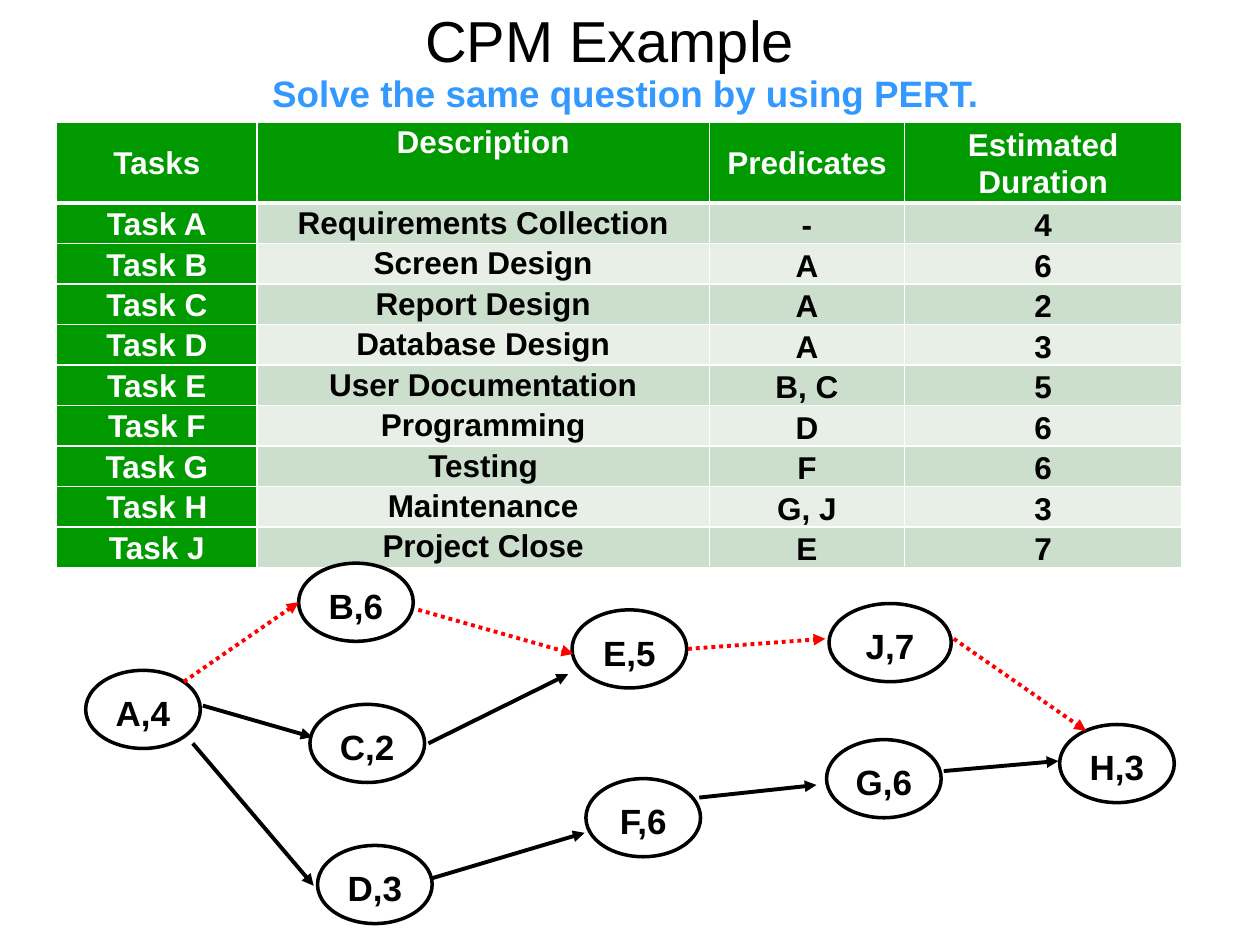
"""Build the CPM example slide: a task table above its activity network."""
from lxml.etree import SubElement
from pptx import Presentation
from pptx.dml.color import RGBColor
from pptx.enum.dml import MSO_LINE
from pptx.enum.shapes import MSO_CONNECTOR, MSO_SHAPE
from pptx.enum.text import MSO_ANCHOR, PP_ALIGN
from pptx.oxml.ns import qn
from pptx.util import Inches, Pt

GREEN, WHITE, BLACK, RED, BLUE = "009900", "FFFFFF", "000000", "FF0000", "3399FF"
BANDS = ["CCDECC", "E7EFE7"]

HEADER = ("Tasks", "Description", "Predicates", "Estimated Duration")
TASKS = [
    ("Task A", "Requirements Collection", "-", "4"),
    ("Task B", "Screen Design", "A", "6"),
    ("Task C", "Report Design", "A", "2"),
    ("Task D", "Database Design", "A", "3"),
    ("Task E", "User Documentation", "B, C", "5"),
    ("Task F", "Programming", "D", "6"),
    ("Task G", "Testing", "F", "6"),
    ("Task H", "Maintenance", "G, J", "3"),
    ("Task J", "Project Close", "E", "7"),
]
COLUMN_WIDTHS = [1.59, 3.59, 1.55, 2.2]
HEADER_HEIGHT, TASK_HEIGHT = 0.63, 0.32

NODE_WIDTH, NODE_HEIGHT = 0.91, 0.62
NODES = [
    ("A,4", 0.68, 5.32, NODE_WIDTH),
    ("B,6", 2.37, 4.47, NODE_WIDTH),
    ("C,2", 2.46, 5.59, NODE_WIDTH),
    ("D,3", 2.52, 6.71, NODE_WIDTH),
    ("E,5", 4.54, 4.84, NODE_WIDTH),
    ("F,6", 4.65, 6.18, NODE_WIDTH),
    ("G,6", 6.56, 5.87, NODE_WIDTH),
    ("J,7", 6.58, 4.79, 0.97),
    ("H,3", 8.41, 5.75, NODE_WIDTH),
]
CRITICAL_ARROWS = [
    (1.46, 5.41, 2.37, 4.78),
    (3.32, 4.84, 4.55, 5.19),
    (5.46, 5.15, 6.55, 5.07),
    (7.57, 5.07, 8.62, 5.8),
]
OTHER_ARROWS = [
    (1.61, 5.6, 2.48, 5.85),
    (1.53, 5.9, 2.49, 7.03),
    (3.4, 5.9, 4.51, 5.35),
    (3.43, 6.97, 4.64, 6.61),
    (5.55, 6.33, 6.48, 6.23),
    (7.49, 6.12, 8.4, 6.04),
]


def rgb(value):
    """Turn a hex string into a colour."""
    return RGBColor.from_string(value)


def write(frame, text, size, color, bold=True, spacing=1.0):
    """Put one centred, formatted paragraph into a text frame."""
    frame.text = text
    frame.word_wrap = True
    paragraph = frame.paragraphs[0]
    paragraph.alignment = PP_ALIGN.CENTER
    paragraph.line_spacing = spacing
    font = paragraph.runs[0].font
    font.name, font.size, font.bold = "Arial", Pt(size), bold
    font.color.rgb = rgb(color)
    return paragraph


def add_heading(page, place, text, size, color, bold, anchor):
    """Add a heading line in its own text box."""
    frame = page.shapes.add_textbox(*map(Inches, place)).text_frame
    frame.vertical_anchor = anchor
    write(frame, text, size, color, bold)


def add_border(cell, side, width):
    """Draw one white edge of a table cell."""
    properties = cell._tc.get_or_add_tcPr()
    edge = SubElement(properties, qn(f"a:ln{side}"), w=str(Pt(width)))
    SubElement(SubElement(edge, qn("a:solidFill")), qn("a:srgbClr"), val=WHITE)


def style_cell(cell, text, row, column):
    """Fill, border and write one cell according to its row and column."""
    is_label = row == 0 or column == 0
    for side in "LRTB":
        thick = (row == 0 and side == "B") or (row == 1 and side == "T")
        add_border(cell, side, 3 if thick else 1)
    cell.fill.solid()
    cell.fill.fore_color.rgb = rgb(GREEN if is_label else BANDS[(row - 1) % 2])
    cell.margin_left = cell.margin_right = Inches(0.06)
    cell.margin_top = cell.margin_bottom = 0
    if column == 1:
        cell.vertical_anchor = MSO_ANCHOR.TOP
    else:
        cell.vertical_anchor = MSO_ANCHOR.MIDDLE if is_label else MSO_ANCHOR.BOTTOM
    write(cell.text_frame, text, 18, WHITE if is_label else BLACK, spacing=1.07)


def add_task_table(page):
    """Add the table of tasks."""
    rows = [HEADER, *TASKS]
    heights = [HEADER_HEIGHT] + [TASK_HEIGHT] * len(TASKS)
    place = map(Inches, (0.45, 0.97, sum(COLUMN_WIDTHS), sum(heights)))
    table = page.shapes.add_table(len(rows), len(HEADER), *place).table
    for column, width in zip(table.columns, COLUMN_WIDTHS):
        column.width = Inches(width)
    for row, (texts, height) in enumerate(zip(rows, heights)):
        table.rows[row].height = Inches(height)
        for column, text in enumerate(texts):
            style_cell(table.cell(row, column), text, row, column)


def add_node(page, text, left, top, width):
    """Add one activity of the network."""
    place = map(Inches, (left, top, width, NODE_HEIGHT))
    node = page.shapes.add_shape(MSO_SHAPE.FLOWCHART_CONNECTOR, *place)
    node.shadow.inherit = False
    node.fill.solid()
    node.fill.fore_color.rgb = rgb(WHITE)
    node.line.color.rgb = rgb(BLACK)
    node.line.width = Pt(2)
    frame = node.text_frame
    frame.margin_left = frame.margin_right = Inches(0.07)
    frame.margin_top = frame.margin_bottom = Inches(0.04)
    frame.vertical_anchor = MSO_ANCHOR.MIDDLE
    write(frame, text, 20, BLACK, spacing=1.15).space_after = Pt(7.5)


def add_arrow(page, ends, critical):
    """Add one dependency, dotted red on the critical route."""
    arrow = page.shapes.add_connector(MSO_CONNECTOR.STRAIGHT, *map(Inches, ends))
    arrow.line.color.rgb = rgb(RED if critical else BLACK)
    arrow.line.width = Pt(2.25)
    if critical:
        arrow.line.dash_style = MSO_LINE.ROUND_DOT
    SubElement(arrow.line._get_or_add_ln(), qn("a:tailEnd"), type="triangle")
    SubElement(arrow._element.spPr, qn("a:effectLst"))


def main():
    """Assemble and save the slide."""
    deck = Presentation()
    deck.slide_width, deck.slide_height = Inches(10), Inches(7.5)
    page = deck.slides.add_slide(deck.slide_layouts[6])
    add_heading(page, (1.09, 0.17, 7.5, 0.29), "CPM Example", 33, BLACK, False, MSO_ANCHOR.MIDDLE)
    add_heading(page, (0.54, 0.51, 8.93, 0.45), "Solve the same question by using PERT. ",
                21, BLUE, True, MSO_ANCHOR.TOP)
    add_task_table(page)
    for node in NODES:
        add_node(page, *node)
    for arrows, critical in ((CRITICAL_ARROWS, True), (OTHER_ARROWS, False)):
        for ends in arrows:
            add_arrow(page, ends, critical)
    deck.save("out.pptx")


if __name__ == "__main__":
    main()
